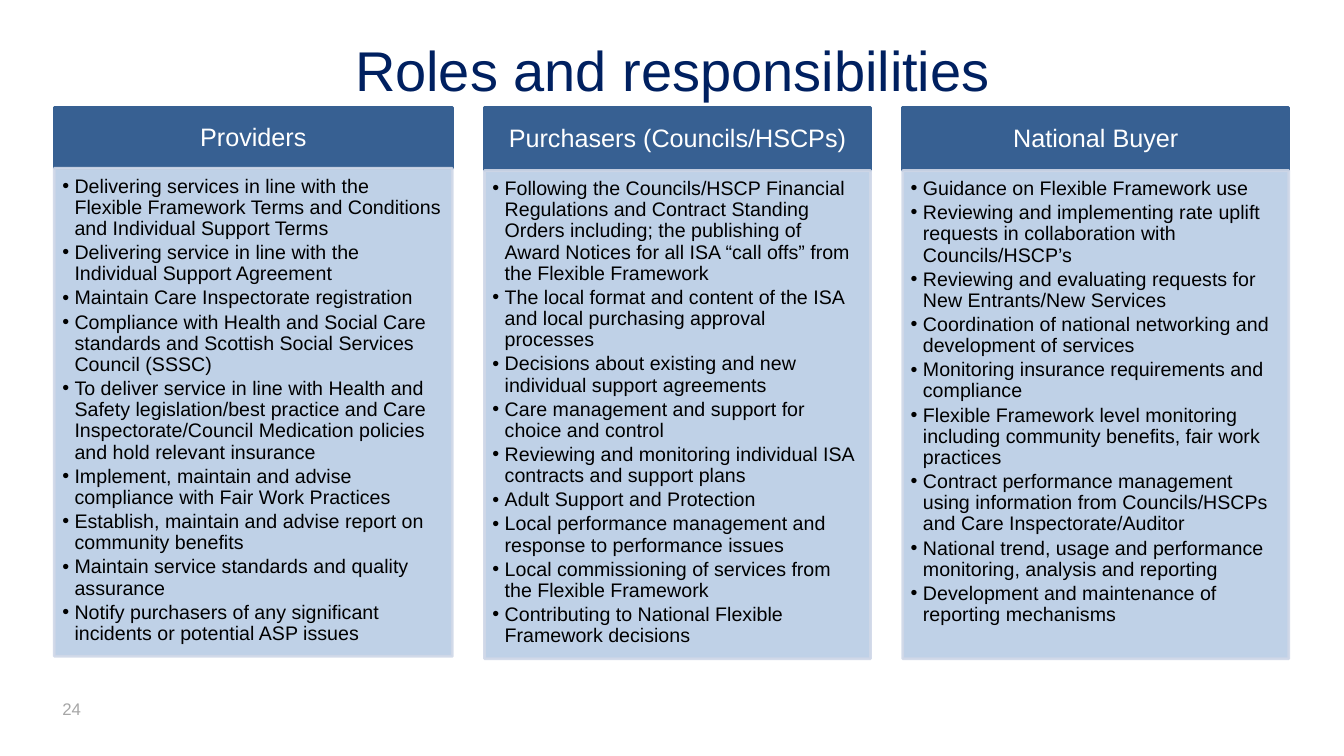
from pptx import Presentation
from pptx.dml.color import RGBColor
from pptx.enum.shapes import MSO_SHAPE as Shape
from pptx.enum.text import MSO_ANCHOR as Anchor, PP_ALIGN as Align
from pptx.oxml.ns import qn
from pptx.util import Cm, Pt
from lxml.etree import SubElement

# Content
TITLE = "Roles and responsibilities"
PAGE_NUMBER = "24"
# Heading, column width and heading height in cm, duties
ROLES = [
    ("Providers", 10.03, 1.52, [
        "Delivering services in line with the Flexible Framework Terms and Conditions and Individual Support Terms",
        "Delivering service in line with the Individual Support Agreement",
        "Maintain Care Inspectorate registration",
        "Compliance with Health and Social Care standards and Scottish Social Services Council (SSSC)",
        "To deliver service in line with Health and Safety legislation/best practice and Care "
        "Inspectorate/Council Medication policies and hold relevant insurance",
        "Implement, maintain and advise compliance with Fair Work Practices",
        "Establish, maintain and advise report on community benefits",
        "Maintain service standards and quality assurance",
        "Notify purchasers of any significant incidents or potential ASP issues",
    ]),
    ("Purchasers (Councils/HSCPs)", 9.73, 1.58, [
        "Following the Councils/HSCP Financial Regulations and Contract Standing Orders including; "
        "the publishing of Award Notices for all ISA “call offs” from the Flexible Framework",
        "The local format and content of the ISA and local purchasing approval processes",
        "Decisions about existing and new individual support agreements",
        "Care management and support for choice and control",
        "Reviewing and monitoring individual ISA contracts and support plans",
        "Adult Support and Protection",
        "Local performance management and response to performance issues",
        "Local commissioning of services from the Flexible Framework",
        "Contributing to National Flexible Framework decisions",
    ]),
    ("National Buyer", 9.73, 1.58, [
        "Guidance on Flexible Framework use",
        "Reviewing and implementing rate uplift requests in collaboration with Councils/HSCP’s",
        "Reviewing and evaluating requests for New Entrants/New Services",
        "Coordination of national networking and development of services",
        "Monitoring insurance requirements and compliance",
        "Flexible Framework level monitoring including community benefits, fair work practices",
        "Contract performance management using information from Councils/HSCPs and Care Inspectorate/Auditor",
        "National trend, usage and performance monitoring, analysis and reporting",
        "Development and maintenance of reporting mechanisms",
    ]),
]

NAVY = RGBColor(0x00, 0x20, 0x60)
BLUE = RGBColor(0x37, 0x60, 0x92)
PALE_BLUE = RGBColor(0xB9, 0xCD, 0xE5)
EDGE = RGBColor(0xD0, 0xD8, 0xE8)
GREY = RGBColor(0xA6, 0xA6, 0xA6)
WHITE = RGBColor(0xFF, 0xFF, 0xFF)
BLACK = RGBColor(0x00, 0x00, 0x00)

# Layout in cm
LEFT, TOP, GAP, DUTIES_HEIGHT = 1.37, 2.72, 0.81, 12.3
INDENT = Cm(0.31)


def write(paragraph, text, size, color):
    run = paragraph.add_run()
    run.text = text
    run.font.name = "Arial"
    run.font.size = Pt(size)
    run.font.color.rgb = color


def set_frame(frame, anchor, *insets):
    frame.word_wrap = True
    frame.vertical_anchor = anchor
    (frame.margin_left, frame.margin_top,
     frame.margin_right, frame.margin_bottom) = map(Cm, insets)


def add_panel(x, y, width, height, fill, edge):
    panel = slide.shapes.add_shape(Shape.RECTANGLE, Cm(x), Cm(y), Cm(width), Cm(height))
    panel.shadow.inherit = False
    panel.fill.solid()
    panel.fill.fore_color.rgb = fill
    panel.line.color.rgb = edge
    panel.line.width = Pt(2)
    return panel


def make_translucent(panel):
    for color in panel._element.spPr.iter(qn("a:srgbClr")):
        SubElement(color, qn("a:alpha"), val="90000")


def add_bullet(paragraph):
    properties = paragraph._p.get_or_add_pPr()
    properties.set("marL", str(INDENT))
    properties.set("indent", str(-INDENT))
    SubElement(properties, qn("a:buFont"), typeface="Arial")
    SubElement(properties, qn("a:buChar"), char="•")


prs = Presentation()
prs.slide_width, prs.slide_height = Cm(33.87), Cm(19.05)
slide = prs.slides.add_slide(prs.slide_layouts[5])

# Title
title = slide.shapes.title
title.left, title.top, title.width, title.height = Cm(1.7), Cm(0.76), Cm(30.48), Cm(1.96)
set_frame(title.text_frame, Anchor.MIDDLE, 0.25, 0.13, 0.25, 0.13)
title.text_frame.paragraphs[0].alignment = Align.CENTER
write(title.text_frame.paragraphs[0], TITLE, 40, NAVY)

# Page number
page = slide.shapes.add_textbox(Cm(1.32), Cm(17.48), Cm(5.56), Cm(0.76)).text_frame
set_frame(page, Anchor.TOP, 0.25, 0.13, 0.25, 0.13)
write(page.paragraphs[0], PAGE_NUMBER, 12, GREY)

# One column per role
x = LEFT
for role, width, heading_height, duties in ROLES:
    heading = add_panel(x, TOP, width, heading_height, BLUE, BLUE).text_frame
    set_frame(heading, Anchor.MIDDLE, 0.36, 0.2, 0.36, 0.2)
    heading.paragraphs[0].alignment = Align.CENTER
    heading.paragraphs[0].line_spacing = 0.9
    write(heading.paragraphs[0], role, 18, WHITE)

    panel = add_panel(x, TOP + heading_height, width, DUTIES_HEIGHT, PALE_BLUE, EDGE)
    make_translucent(panel)
    set_frame(panel.text_frame, Anchor.TOP, 0.2, 0.2, 0.25, 0.28)
    for i, duty in enumerate(duties):
        line = panel.text_frame.add_paragraph() if i else panel.text_frame.paragraphs[0]
        add_bullet(line)
        line.alignment = Align.LEFT
        line.line_spacing = 0.9
        line.space_after = Pt(2.1)
        write(line, duty, 14, BLACK)
    x += width + GAP

prs.save("out.pptx")
